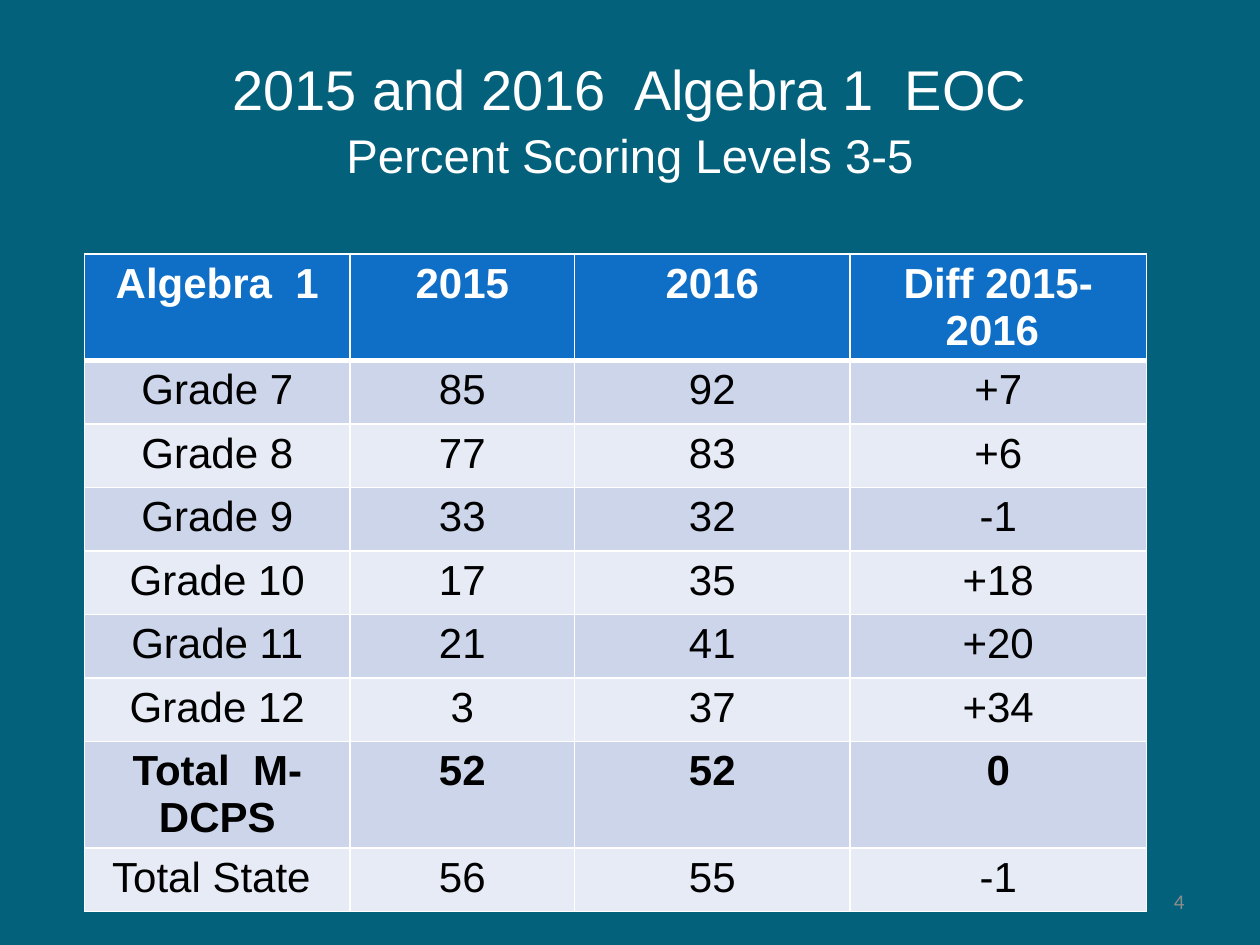
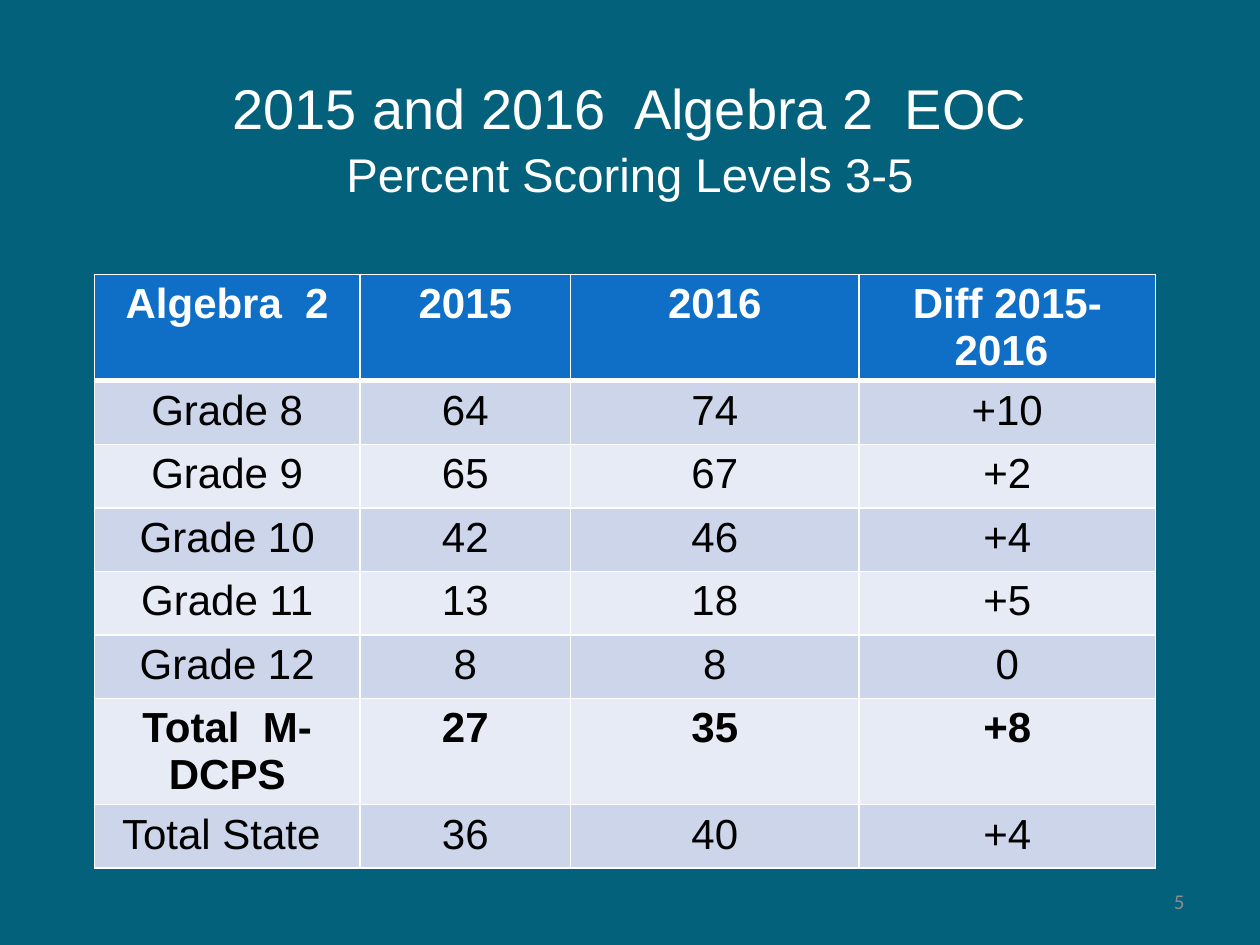
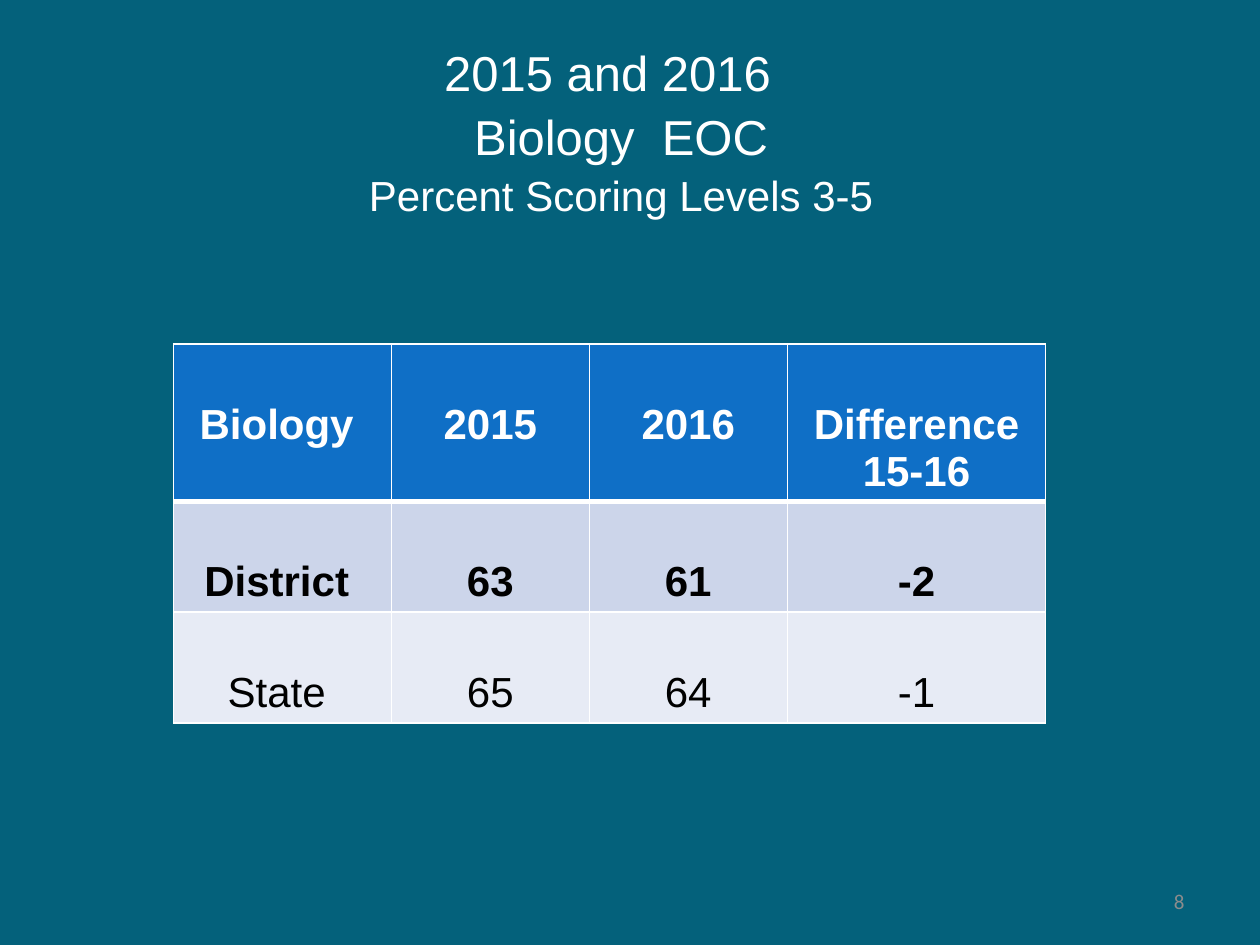
import pptx
import pptx.dml.color
import pptx.enum.text
import pptx.util
from lxml import etree
from pptx.util import Cm, Pt

# Shared look
BACKGROUND = "04617B"
WHITE = "FFFFFF"
BLACK = "000000"
HEADER_FILL = "0F6FC6"
BAND_FILLS = ["E7EBF5", "CCD5EA"]
PAGE_NUMBER_GREY = "8C8C8C"
TABLE_SIZE = 24
DRAWING_NS = "http://schemas.openxmlformats.org/drawingml/2006/main"
ALIGN = pptx.enum.text.PP_ALIGN
ANCHOR = pptx.enum.text.MSO_ANCHOR


def style_text(paragraph, size, colour, bold=False, font="Arial", align=ALIGN.CENTER):
    paragraph.alignment = align
    for run in paragraph.runs:
        run.font.name = font
        run.font.size = Pt(size)
        run.font.bold = bold
        run.font.color.rgb = pptx.dml.color.RGBColor.from_string(colour)


def add_border(cell, side, width):
    properties = cell._tc.get_or_add_tcPr()
    line = etree.SubElement(properties, f"{{{DRAWING_NS}}}ln{side}", w=str(Pt(width)))
    fill = etree.SubElement(line, f"{{{DRAWING_NS}}}solidFill")
    etree.SubElement(fill, f"{{{DRAWING_NS}}}srgbClr", val=WHITE)


# Scores; each title line has its own size, bold_row is the district's row
reports = [
    {
        "title": [("2015 and 2016  Algebra 1  EOC", 32), ("Percent Scoring Levels 3-5", 27)],
        "title_box": (1.27, 0.8, 22.86, 3.18),
        "table_at": (1.7, 5.12),
        "columns": [5.36, 4.52, 5.56, 5.97],
        "row_height": 1.28,
        "top_margin": 0.13,
        "bold_row": 7,
        "page": "4",
        "rows": [
            ["Algebra  1", "2015", "2016", "Diff 2015-2016 "],
            ["Grade 7", "85", "92", "+7"],
            ["Grade 8", "77", "83", "+6"],
            ["Grade 9", "33", "32", "-1"],
            ["Grade 10", "17", "35", "+18"],
            ["Grade 11", "21", "41", "+20"],
            ["Grade 12", "3", "37", "+34"],
            ["Total  M-DCPS", "52", "52", "0"],
            ["Total State ", "56", "55", "-1"],
        ],
    },
    {
        "title": [("2015 and 2016  Algebra 2  EOC", 32), ("Percent Scoring Levels 3-5", 27)],
        "title_box": (1.27, 0.8, 22.86, 3.96),
        "table_at": (1.9, 5.53),
        "columns": [5.36, 4.24, 5.82, 5.97],
        "row_height": 1.28,
        "top_margin": 0.13,
        "bold_row": 6,
        "page": "5",
        "rows": [
            ["Algebra  2", "2015", "2016", "Diff 2015-2016 "],
            ["Grade 8", "64", "74", "+10"],
            ["Grade 9", "65", "67", "+2"],
            ["Grade 10", "42", "46", "+4"],
            ["Grade 11", "13", "18", "+5"],
            ["Grade 12", "8", "8", "0"],
            ["Total  M-DCPS", "27", "35", "+8"],
            ["Total State ", "36", "40", "+4"],
        ],
    },
    {
        "title": [("2015 and 2016  ", 28), ("Biology  EOC", 28), ("Percent Scoring Levels 3-5", 24)],
        "title_box": (1.09, 0.55, 22.86, 4.19),
        "table_at": (3.5, 6.93),
        "columns": [4.39, 3.99, 3.99, 5.21],
        "row_height": 2.13,
        "top_margin": 1.16,
        "bold_row": 1,
        "page": "8",
        "rows": [
            ["Biology ", "2015", "2016", "Difference 15-16"],
            ["District ", "63", "61", "-2"],
            ["State ", "65", "64", "-1"],
        ],
    },
]

presentation = pptx.Presentation()
presentation.slide_width = Cm(25.4)
presentation.slide_height = Cm(19.05)
backdrop = presentation.slide_master.background.fill
backdrop.solid()
backdrop.fore_color.rgb = pptx.dml.color.RGBColor.from_string(BACKGROUND)

for report in reports:
    slide = presentation.slides.add_slide(presentation.slide_layouts[5])

    # Title
    title = slide.shapes.title
    title.left, title.top, title.width, title.height = map(Cm, report["title_box"])
    heading = title.text_frame
    heading.text = "\n".join(line for line, size in report["title"])
    heading.auto_size = pptx.enum.text.MSO_AUTO_SIZE.NONE
    heading.vertical_anchor = ANCHOR.MIDDLE
    for index, (line, size) in enumerate(report["title"]):
        paragraph = heading.paragraphs[index]
        paragraph.space_before = Pt(2.5 if index else 0)
        style_text(paragraph, size, WHITE)

    # Score table
    rows, columns = report["rows"], report["columns"]
    left, top = report["table_at"]
    scores = slide.shapes.add_table(
        len(rows), len(columns), Cm(left), Cm(top),
        Cm(sum(columns)), Cm(report["row_height"] * len(rows))).table
    for column, width in zip(scores.columns, columns):
        column.width = Cm(width)
    for row_index, values in enumerate(rows):
        scores.rows[row_index].height = Cm(report["row_height"])
        is_header = row_index == 0
        fill_colour = HEADER_FILL if is_header else BAND_FILLS[row_index % 2]
        for column_index, value in enumerate(values):
            cell = scores.cell(row_index, column_index)
            cell.text_frame.text = value
            cell.margin_top = Cm(report["top_margin"])
            style_text(cell.text_frame.paragraphs[0], TABLE_SIZE,
                       WHITE if is_header else BLACK,
                       bold=row_index in (0, report["bold_row"]))
            add_border(cell, "L", 1)
            add_border(cell, "R", 1)
            add_border(cell, "T", 3 if row_index == 1 else 1)
            add_border(cell, "B", 3 if is_header else 1)
            cell.fill.solid()
            cell.fill.fore_color.rgb = pptx.dml.color.RGBColor.from_string(fill_colour)

    # Page number
    page_number = slide.shapes.add_textbox(Cm(18.21), Cm(17.65), Cm(5.92), Cm(1.02)).text_frame
    page_number.word_wrap = True
    page_number.vertical_anchor = ANCHOR.MIDDLE
    page_number.text = report["page"]
    style_text(page_number.paragraphs[0], 12, PAGE_NUMBER_GREY, font="Calibri", align=ALIGN.RIGHT)

presentation.save("out.pptx")
